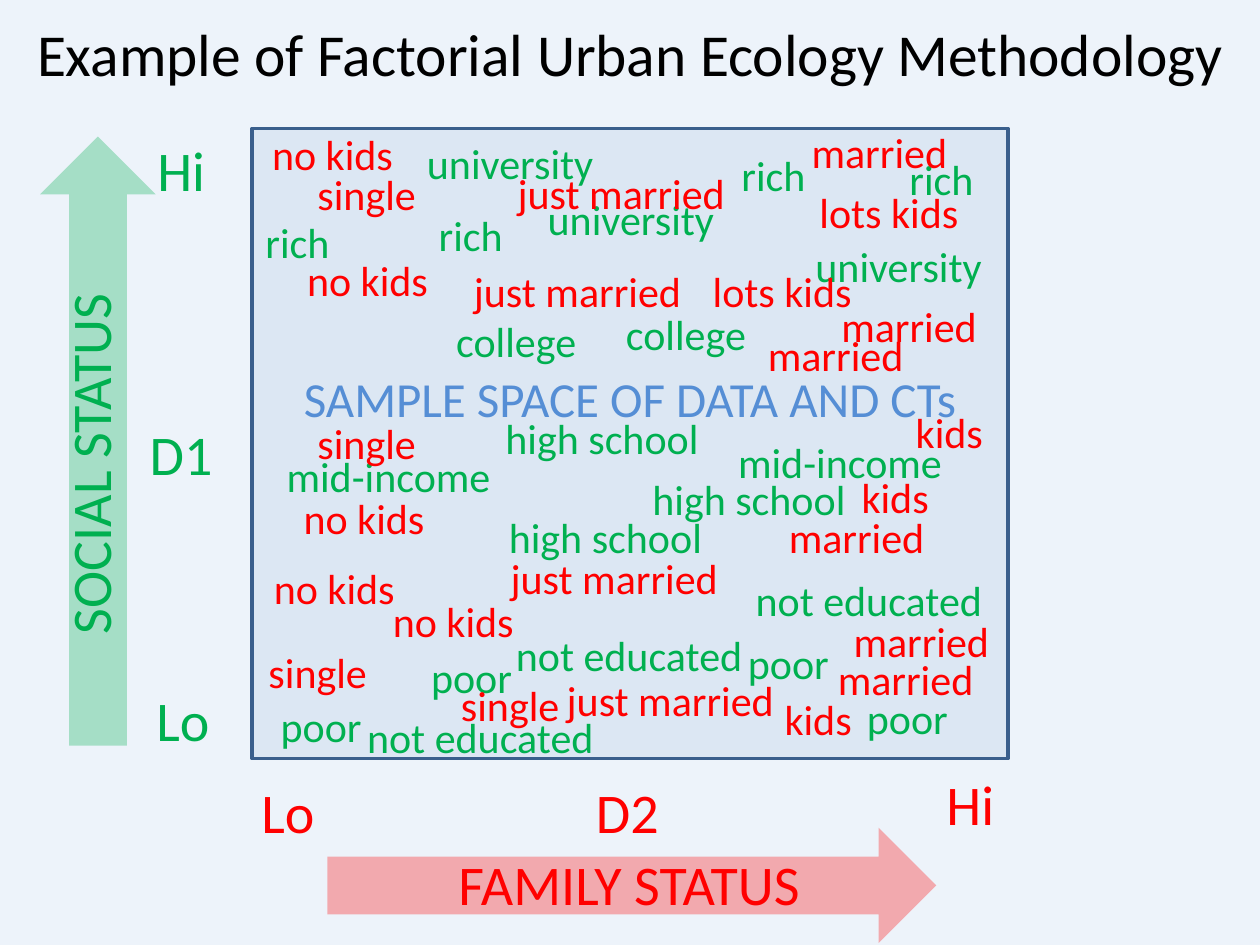
from dataclasses import dataclass

from lxml.etree import SubElement
from pptx import Presentation
from pptx.dml.color import RGBColor
from pptx.enum.shapes import MSO_SHAPE
from pptx.enum.text import MSO_AUTO_SIZE, PP_ALIGN
from pptx.oxml.ns import qn
from pptx.util import Pt


@dataclass(frozen=True)
class Theme:
    """Colours, opacities and type sizes of the slide."""
    font: str = "Calibri"
    social: str = "00B050"
    family: str = "FF0000"
    space: str = "558ED5"
    box: str = "4F81BD"
    border: str = "3A5F8C"
    ink: str = "000000"
    pale: int = 10
    soft: int = 30
    title: int = 34
    axis: int = 32
    heading: int = 28
    word: int = 24


THEME = Theme()

SOCIAL_WORDS = [
    ("rich", 52, [(512, 84), (243, 116), (416, 82), (144, 120)]),
    ("poor", 61, [(488, 392), (420, 361), (153, 397), (239, 369)]),
    ("mid-income", 132, [(414, 246), (156, 254)]),
    ("university", 111, [(458, 134), (236, 75), (305, 107)]),
    ("not educated", 145, [(202, 403), (287, 356), (424, 325)]),
    ("high school", 128, [(282, 289), (364, 267), (280, 232)]),
    ("college", 84, [(350, 173), (253, 177)]),
]
FAMILY_WORDS = [
    ("single", 71, [(146, 366), (256, 385), (174, 93), (174, 235)]),
    ("married", 93, [(471, 370), (473, 168), (480, 348), (443, 289), (456, 69), (431, 185)]),
    ("kids", 53, [(441, 393), (516, 229), (485, 266)]),
    ("lots kids", 94, [(400, 148), (461, 103)]),
    ("no kids", 84, [(149, 318), (166, 278), (217, 337), (148, 70), (168, 142)]),
    ("just married", 136, [(287, 92), (262, 148), (283, 312), (315, 382)]),
]
SOCIAL_LABELS = [("Hi", 82, 74, 43), ("D1", 78, 236, 51), ("Lo", 82, 388, 45)]
FAMILY_LABELS = [("Lo", 142, 441, 45), ("D2", 333, 441, 51), ("Hi", 533, 436, 43),
                 ("FAMILY STATUS", 251, 482, 217)]


def tint(fill, color, opacity):
    """Give a fill a solid colour with an opacity in percent."""
    fill.solid()
    fill.fore_color.rgb = RGBColor.from_string(color)
    solid = fill._xPr.find(qn("a:solidFill"))
    SubElement(solid[0], qn("a:alpha"), val=str(opacity * 1000))


def add_block(s, kind, box, color, opacity):
    """Add a translucent preset shape without an outline."""
    sp = s.shapes.add_shape(kind, *map(Pt, box))
    sp.shadow.inherit = False
    tint(sp.fill, color, opacity)
    sp.line.fill.background()
    return sp


def add_text(s, text, box, size, color, wrap=False):
    """Add a centred one-line text box."""
    sp = s.shapes.add_textbox(*map(Pt, box))
    tf = sp.text_frame
    tf.word_wrap = wrap
    tf.auto_size = MSO_AUTO_SIZE.NONE if wrap else MSO_AUTO_SIZE.SHAPE_TO_FIT_TEXT
    p = tf.paragraphs[0]
    p.text = text
    p.alignment = PP_ALIGN.CENTER
    p.font.name = THEME.font
    p.font.size = Pt(size)
    p.font.color.rgb = RGBColor.from_string(color)
    return sp


def add_labels(s, labels, color):
    """Add the labels along one axis."""
    for text, x, y, width in labels:
        add_text(s, text, (x, y, width, 46), THEME.axis, color)


def add_words(s, words, color):
    """Scatter the words of one dimension over the sample space."""
    for text, width, places in words:
        for x, y in places:
            add_text(s, text, (x, y, width, 36), THEME.word, color)


def main():
    """Build the slide and save it."""
    prs = Presentation()
    prs.slide_width, prs.slide_height = Pt(720), Pt(540)
    s = prs.slides.add_slide(prs.slide_layouts[6])
    tint(s.background.fill, THEME.space, THEME.pale)

    arrow = add_block(s, MSO_SHAPE.UP_ARROW, (328, 332, 66, 348), THEME.family, THEME.soft)
    arrow.rotation = 90
    add_block(s, MSO_SHAPE.UP_ARROW, (23, 78, 66, 348), THEME.social, THEME.soft)
    space = add_block(s, MSO_SHAPE.RECTANGLE, (144, 73.5, 432, 360), THEME.box, THEME.pale)
    space.line.color.rgb = RGBColor.from_string(THEME.border)
    space.line.width = Pt(2)

    add_text(s, "Example of Factorial Urban Ecology Methodology", (0, 6, 720, 48),
             THEME.title, THEME.ink, wrap=True)
    add_text(s, "SAMPLE SPACE OF DATA AND CTs", (158, 207, 404, 41), THEME.heading, THEME.space)
    add_labels(s, SOCIAL_LABELS, THEME.social)
    add_labels(s, FAMILY_LABELS, THEME.family)
    side = add_text(s, "SOCIAL STATUS", (28, 163, 53, 204), THEME.axis, THEME.social)
    side.text_frame._txBody.bodyPr.set("vert", "vert270")
    add_words(s, SOCIAL_WORDS, THEME.social)
    add_words(s, FAMILY_WORDS, THEME.family)
    prs.save("out.pptx")


if __name__ == "__main__":
    main()
